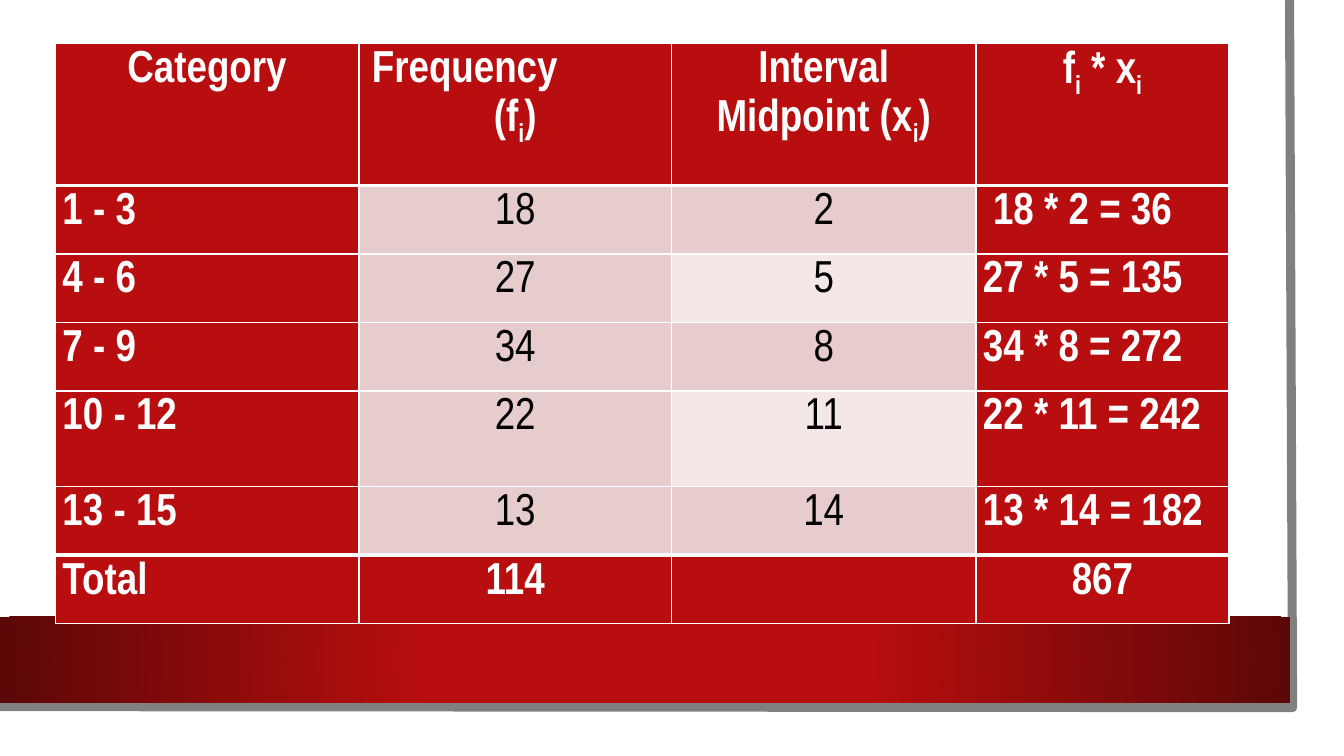
from lxml import etree
from pptx import Presentation
from pptx import util as u
from pptx.dml.color import RGBColor
from pptx.enum import shapes, text
from pptx.oxml import ns

COLORS = {
    "white": "FFFFFF", "black": "000000", "red": "B80E0F", "dark_red": "5C0707",
    "gray": "808080", "pink": "E6CCCC", "pale": "F3E7E7",
}
FONT = "Arial Narrow"
INTERVALS = [("1 - 3", 18, 2), ("4 - 6", 27, 5), ("7 - 9", 34, 8),
             ("10 - 12", 22, 11), ("13 - 15", 13, 14)]
COLUMN_WIDTHS = [3.01, 3.1, 3.02, 2.51]
ROW_HEIGHTS = [1.41, 0.68, 0.68, 0.68, 0.95, 0.68, 0.68]
CENTER = text.PP_ALIGN.CENTER
LEFT = text.PP_ALIGN.LEFT


def rgb(name):
    """Return the palette colour of that name."""
    return RGBColor.from_string(COLORS[name])


def write(paragraph, content, align=LEFT, color="white", bold=True, after=10, indent=0):
    """Write text whose parts between underscores are subscripts."""
    paragraph.alignment = align
    paragraph.line_spacing = 1.15
    paragraph.space_after = u.Pt(after)
    if indent:
        properties = paragraph._p.get_or_add_pPr()
        properties.set("marL", str(u.Inches(indent)))
        properties.set("indent", "0")
    for position, part in enumerate(content.split("_")):
        if not part:
            continue
        run = paragraph.add_run()
        run.text = part
        run.font.name = FONT
        run.font.size = u.Pt(32)
        run.font.bold = bold
        run.font.color.rgb = rgb(color)
        if position % 2:
            run.font._element.set("baseline", "-25000")


def add_border(cell, side, points):
    """Draw one white edge of a table cell."""
    edge = etree.SubElement(cell._tc.get_or_add_tcPr(), ns.qn(f"a:ln{side}"),
                            w=str(u.Pt(points)))
    fill = etree.SubElement(edge, ns.qn("a:solidFill"))
    etree.SubElement(fill, ns.qn("a:srgbClr"), val=COLORS["white"])


def style_cell(cell, fill, top=1, bottom=1):
    """Set the margins, edges and fill of a cell."""
    cell.margin_left = cell.margin_right = u.Inches(0.07)
    cell.margin_top = cell.margin_bottom = 0
    for side, points in zip("LRTB", (1, 1, top, bottom)):
        add_border(cell, side, points)
    cell.fill.solid()
    cell.fill.fore_color.rgb = rgb(fill)


def add_rectangle(slide, left, top, width, height):
    """Add a rectangle with neither line nor shadow."""
    rectangle = slide.shapes.add_shape(
        shapes.MSO_SHAPE.RECTANGLE, *map(u.Inches, (left, top, width, height)))
    rectangle.shadow.inherit = False
    rectangle.line.fill.background()
    return rectangle


def add_backdrop(slide):
    """Add the page panel, its gray edge and the red band."""
    panel = add_rectangle(slide, 0, 0, 13.1, 7.27)
    panel.fill.solid()
    panel.fill.fore_color.rgb = rgb("white")

    builder = slide.shapes.build_freeform(u.Inches(12.79), 0)
    builder.add_line_segments(
        [(u.Inches(12.82), u.Inches(7.02)), (u.Inches(-0.03), u.Inches(7.01))], close=False)
    edge = builder.convert_to_shape()
    edge.shadow.inherit = False
    edge.fill.background()
    edge.line.color.rgb = rgb("gray")
    edge.line.width = u.Pt(6.5)

    band = add_rectangle(slide, 0, 6.12, 12.8, 0.85)
    band.fill.gradient()
    for stop, position, color in zip(band.fill.gradient_stops, (0.34, 1), ("red", "dark_red")):
        stop.position = position
        stop.color.rgb = rgb(color)
    gradient = band._element.spPr.find(ns.qn("a:gradFill"))
    gradient.remove(gradient.find(ns.qn("a:lin")))
    circle = etree.SubElement(gradient, ns.qn("a:path"), path="circle")
    etree.SubElement(circle, ns.qn("a:fillToRect"), l="50000", t="50000", r="50000", b="50000")


def fill_header(cells):
    """Write the column headings."""
    for cell in cells:
        style_cell(cell, "red", bottom=3)
    category, frequency, midpoint, product = (cell.text_frame for cell in cells)
    write(category.paragraphs[0], "Category", align=CENTER)
    write(frequency.paragraphs[0], "Frequency", after=0, indent=0.06)
    write(frequency.add_paragraph(), "(f_i_)", align=CENTER)
    write(midpoint.paragraphs[0], "Interval Midpoint (x_i_)", align=CENTER)
    write(product.paragraphs[0], "f_i_ * x_i_", align=CENTER)


def fill_interval(cells, index, interval, frequency, midpoint):
    """Write one interval with its product."""
    fills = ("red", "pink", "pale" if index % 2 else "pink", "red")
    for cell, fill in zip(cells, fills):
        style_cell(cell, fill, top=1 if index else 3,
                   bottom=3 if index == len(INTERVALS) - 1 else 1)
    lines = [cell.text_frame.paragraphs[0] for cell in cells]
    write(lines[0], interval)
    for line, value in zip(lines[1:3], (frequency, midpoint)):
        write(line, str(value), align=CENTER, color="black", bold=False)
    write(lines[3], f"{frequency} * {midpoint} = {frequency * midpoint}",
          indent=0 if index else 0.1)


def fill_total(cells):
    """Write the sums of frequencies and products."""
    frequency_sum = sum(frequency for _, frequency, _ in INTERVALS)
    product_sum = sum(frequency * midpoint for _, frequency, midpoint in INTERVALS)
    for column, (cell, value) in enumerate(
            zip(cells, ("Total", str(frequency_sum), "", str(product_sum)))):
        style_cell(cell, "red", top=3)
        write(cell.text_frame.paragraphs[0], value, align=CENTER if column else LEFT)


def add_frequency_table(slide):
    """Add the grouped frequency table."""
    table = slide.shapes.add_table(
        len(ROW_HEIGHTS), len(COLUMN_WIDTHS), u.Inches(0.55), u.Inches(0.43),
        u.Inches(sum(COLUMN_WIDTHS)), u.Inches(sum(ROW_HEIGHTS))).table
    table.horz_banding = False
    for column, width in zip(table.columns, COLUMN_WIDTHS):
        column.width = u.Inches(width)
    for row, height in zip(table.rows, ROW_HEIGHTS):
        row.height = u.Inches(height)
    header, *body, total = [list(row.cells) for row in table.rows]
    fill_header(header)
    for index, (cells, interval) in enumerate(zip(body, INTERVALS)):
        fill_interval(cells, index, *interval)
    fill_total(total)


def main():
    """Build and save the slide."""
    deck = Presentation()
    deck.slide_width = u.Inches(13.33)
    deck.slide_height = u.Inches(7.5)
    slide = deck.slides.add_slide(deck.slide_layouts[6])
    add_backdrop(slide)
    add_frequency_table(slide)
    deck.save("out.pptx")


if __name__ == "__main__":
    main()
